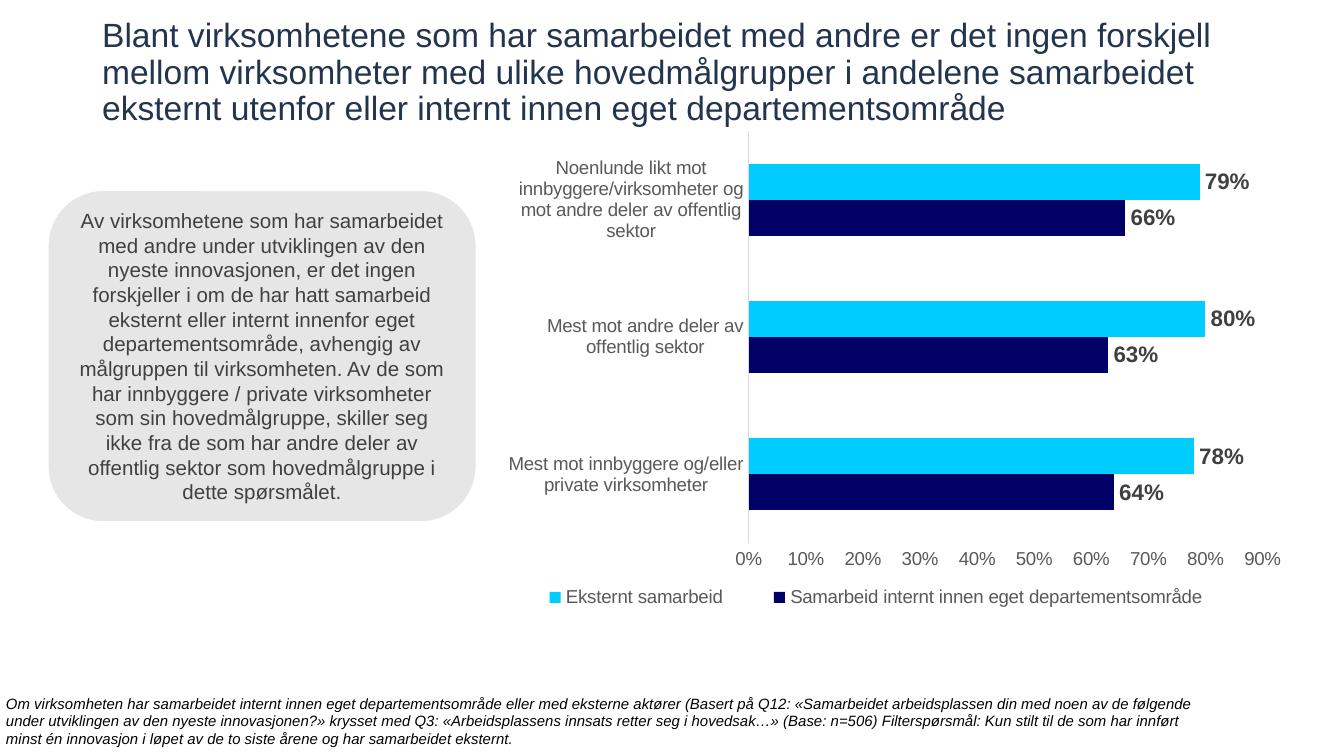
from pptx import Presentation
from pptx.chart.data import CategoryChartData
from pptx.dml.color import RGBColor
from pptx.enum.chart import XL_CHART_TYPE, XL_LABEL_POSITION, XL_LEGEND_POSITION, XL_TICK_MARK
from pptx.enum.shapes import MSO_SHAPE
from pptx.enum.text import MSO_ANCHOR, MSO_AUTO_SIZE, PP_ALIGN
from pptx.oxml import parse_xml
from pptx.oxml.ns import nsdecls
from pptx.util import Pt

PX = 4572


def tint(color, code):
    color.rgb = RGBColor.from_string(code)


def style(font, size, code, **more):
    look = {"name": "Arial", "size": Pt(size), "bold": False, "italic": False, **more}
    for key, value in look.items():
        setattr(font, key, value)
    tint(font.color, code)


deck = Presentation()
deck.slide_width, deck.slide_height = 2000 * PX, 1125 * PX
slide = deck.slides.add_slide(deck.slide_layouts[5])
shapes = slide.shapes

title = shapes.title
note = shapes.add_textbox(0, 0, 0, 0)

data = CategoryChartData(number_format="0%")
data.categories = [
    "Mest mot innbyggere og/eller private virksomheter",
    "Mest mot andre deler av offentlig sektor",
    "Noenlunde likt mot innbyggere/virksomheter og mot andre deler av offentlig sektor",
]
data.add_series("Samarbeid internt innen eget departementsområde", [0.64, 0.63, 0.66])
data.add_series("Eksternt samarbeid", [0.78, 0.8, 0.79])
frame = shapes.add_chart(
    XL_CHART_TYPE.BAR_CLUSTERED, 733 * PX, 165 * PX, 1206 * PX, 842 * PX, data
)
chart = frame.chart
chart.has_title = False
style(chart.font, 10, "000000")
chart.has_legend = True
legend = chart.legend
legend.position = XL_LEGEND_POSITION.BOTTOM
legend.include_in_layout = False
style(legend.font, 10, "595959")

base, scale = chart.category_axis, chart.value_axis
for axis in (base, scale):
    axis.has_major_gridlines = False
    axis.major_tick_mark = axis.minor_tick_mark = XL_TICK_MARK.NONE
    style(axis.tick_labels.font, 10, "595959")
tint(base.format.line.color, "D9D9D9")
base.format.line.width = Pt(0.75)
scale.format.line.fill.background()
limits = {"minimum_scale": 0, "maximum_scale": 0.9, "major_unit": 0.1}
for key, value in limits.items():
    setattr(scale, key, value)
scale.tick_labels.number_format = "0%"
scale.tick_labels.number_format_is_linked = False

plot = chart.plots[0]
plot.gap_width, plot.overlap, plot.vary_by_categories = 182, 0, False
for series, code in zip(plot.series, ("000066", "00CCFF")):
    series.format.fill.solid()
    tint(series.format.fill.fore_color, code)
    labels = series.data_labels
    marks = {
        "show_value": True,
        "position": XL_LABEL_POSITION.OUTSIDE_END,
        "number_format": "0%",
        "number_format_is_linked": False,
    }
    for key, value in marks.items():
        setattr(labels, key, value)
    style(labels.font, 12, "404040", bold=True)

layouts = [
    ("c:plotArea", 0, '<c:layoutTarget val="inner"/>', (0.316, 0.036, 0.634, 0.728)),
    ("c:legend", 1, "", (0.015, 0.83, 0.916, 0.06)),
]
for tag, spot, target, box in layouts:
    part = chart.element.xpath(f"c:chart/{tag}")[0]
    for old in part.xpath("c:layout"):
        part.remove(old)
    sizes = "".join(f'<c:{key} val="{value}"/>' for key, value in zip("xywh", box))
    part.insert(spot, parse_xml(
        f'<c:layout {nsdecls("c")}><c:manualLayout>{target}'
        f'<c:xMode val="edge"/><c:yMode val="edge"/>{sizes}</c:manualLayout></c:layout>'
    ))

panel = shapes.add_shape(MSO_SHAPE.ROUNDED_RECTANGLE, 0, 0, 0, 0)
panel.shadow.inherit = False
panel.fill.solid()
tint(panel.fill.fore_color, "E7E6E6")
tint(panel.line.color, "FFFFFF")
panel.line.width = Pt(1)

texts = [
    (title, (152, 76, 1786, 66), MSO_ANCHOR.MIDDLE, PP_ALIGN.LEFT, 0.9, 0,
     {"size": 18, "code": "23344F"},
     "Blant virksomhetene som har samarbeidet med andre er det ingen forskjell "
     "mellom virksomheter med ulike hovedmålgrupper i andelene samarbeidet "
     "eksternt utenfor eller internt innen eget departementsområde"),
    (note, (9, 1033, 1800, 80), MSO_ANCHOR.TOP, PP_ALIGN.LEFT, 1.0, 0,
     {"size": 8, "code": "000000", "italic": True},
     "Om virksomheten har samarbeidet internt innen eget departementsområde eller "
     "med eksterne aktører (Basert på Q12: «Samarbeidet arbeidsplassen din med noen "
     "av de følgende under utviklingen av den nyeste innovasjonen?» krysset med Q3: "
     "«Arbeidsplassens innsats retter seg i hovedsak…» (Base: n=506) Filterspørsmål: "
     "Kun stilt til de som har innført minst én innovasjon i løpet av de to siste "
     "årene og har samarbeidet eksternt."),
    (panel, (71, 283, 638, 494), MSO_ANCHOR.MIDDLE, PP_ALIGN.CENTER, 1.0, 20,
     {"size": 11, "code": "404040"},
     "Av virksomhetene som har samarbeidet med andre under utviklingen av den nyeste "
     "innovasjonen, er det ingen forskjeller i om de har hatt samarbeid eksternt eller "
     "internt innenfor eget departementsområde, avhengig av målgruppen til virksomheten. "
     "Av de som har innbyggere / private virksomheter som sin hovedmålgruppe, skiller "
     "seg ikke fra de som har andre deler av offentlig sektor som hovedmålgruppe i "
     "dette spørsmålet."),
]
for shape, place, anchor, align, space, inset, look, words in texts:
    for key, value in zip(("left", "top", "width", "height"), place):
        setattr(shape, key, value * PX)
    body = shape.text_frame
    body.text = words
    form = {
        "word_wrap": True,
        "auto_size": MSO_AUTO_SIZE.NONE,
        "vertical_anchor": anchor,
        "margin_left": inset * PX,
        "margin_right": inset * PX,
        "margin_top": inset * PX // 2,
        "margin_bottom": inset * PX // 2,
    }
    for key, value in form.items():
        setattr(body, key, value)
    para = body.paragraphs[0]
    para.alignment, para.line_spacing = align, space
    style(para.runs[0].font, **look)

deck.save("out.pptx")
